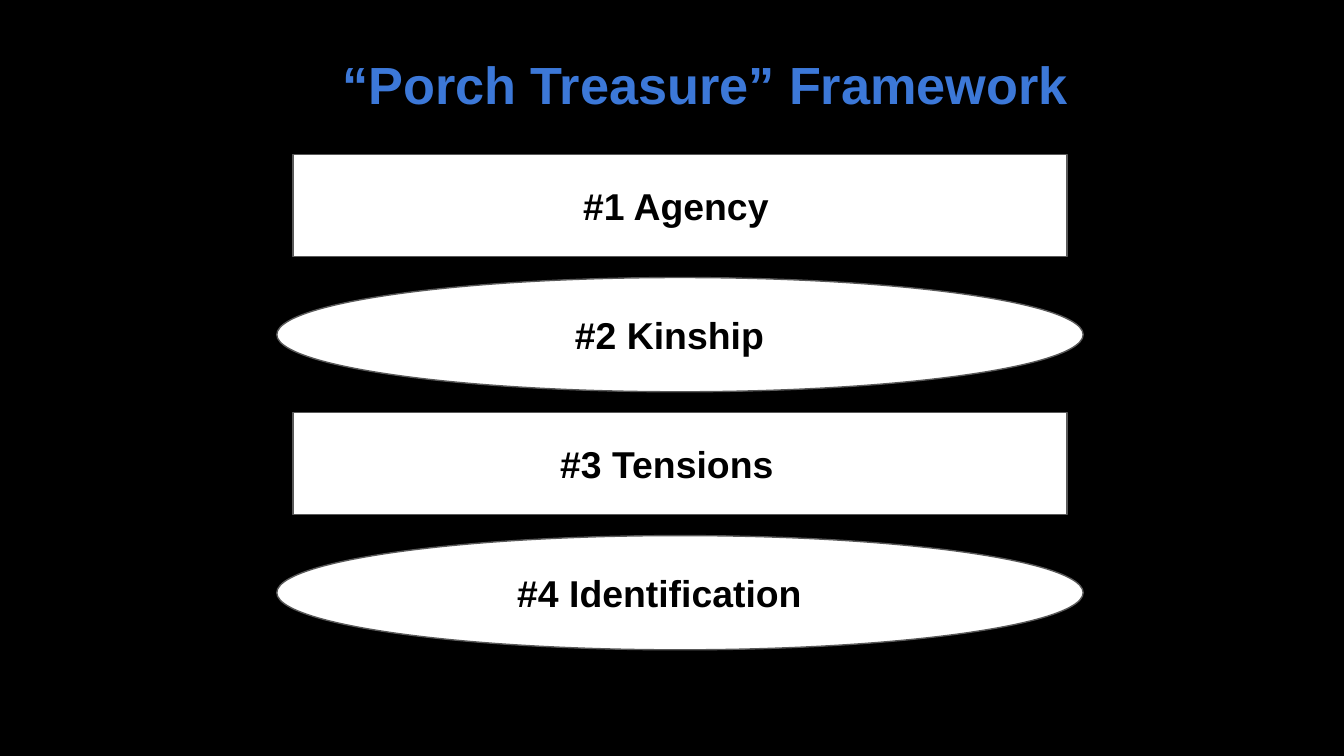
from pptx import Presentation
from pptx.dml.color import RGBColor
from pptx.enum.shapes import MSO_SHAPE
from pptx.enum.text import MSO_ANCHOR, MSO_AUTO_SIZE, PP_ALIGN
from pptx.util import Inches, Pt

BLACK = RGBColor(0, 0, 0)
WHITE = RGBColor(255, 255, 255)
BLUE = RGBColor(0x3C, 0x78, 0xD8)
GRAY = RGBColor(0x59, 0x59, 0x59)

TITLE = "“Porch Treasure” Framework"
BOX = (MSO_SHAPE.RECTANGLE, 5.76, 0.76)
OVAL = (MSO_SHAPE.OVAL, 6, 0.85)
THEMES = [
    ("#1 Agency", BOX, 4.24, 1.64),
    ("#2 Kinship", OVAL, 4.18, 1.64),
    ("#3 Tensions", BOX, 4.07, 1.86),
    ("#4 Identification", OVAL, 3.75, 2.61),
]
CENTER_X, FIRST_Y, PITCH = 5.06, 1.53, 0.96
LABEL_H = 0.54


def write(shape, text, size, color, align):
    tf = shape.text_frame
    tf.word_wrap = True
    tf.auto_size = MSO_AUTO_SIZE.NONE
    tf.vertical_anchor = MSO_ANCHOR.TOP
    tf.margin_left = tf.margin_right = Inches(0.1)
    tf.margin_top = tf.margin_bottom = Inches(0.1)
    p = tf.paragraphs[0]
    p.alignment = align
    p.line_spacing = 1.0
    p.space_before = Pt(0)
    r = p.add_run()
    r.text = text
    r.font.name = "Arial"
    r.font.size = Pt(size)
    r.font.bold = True
    r.font.color.rgb = color
    return p


def add_white(slide, kind, x, y, w, h):
    sp = slide.shapes.add_shape(kind, Inches(x), Inches(y), Inches(w), Inches(h))
    sp.shadow.inherit = False
    sp.fill.solid()
    sp.fill.fore_color.rgb = WHITE
    sp.line.fill.background()
    return sp


prs = Presentation()
prs.slide_width = Inches(10)
prs.slide_height = Inches(10 * 9 / 16)
s = prs.slides.add_slide(prs.slide_layouts[5])
s.background.fill.solid()
s.background.fill.fore_color.rgb = BLACK

title = s.shapes.title
title.left, title.top = Inches(1.44), Inches(0.29)
title.width, title.height = Inches(7.11), Inches(0.87)
p = write(title, TITLE, 28, BLUE, PP_ALIGN.CENTER)
pPr = p._p.get_or_add_pPr()
pPr.set("marL", str(Inches(0.5)))
pPr.set("indent", "0")

for i, (text, (kind, w, h), label_x, label_w) in enumerate(THEMES):
    y = FIRST_Y + i * PITCH
    band = add_white(s, kind, CENTER_X - w / 2, y - h / 2, w, h)
    band.line.color.rgb = GRAY
    band.line.width = Pt(0.75)
    label = add_white(s, MSO_SHAPE.RECTANGLE, label_x, y - LABEL_H / 2, label_w, LABEL_H)
    write(label, text, 20, BLACK, PP_ALIGN.LEFT)

prs.save("out.pptx")
